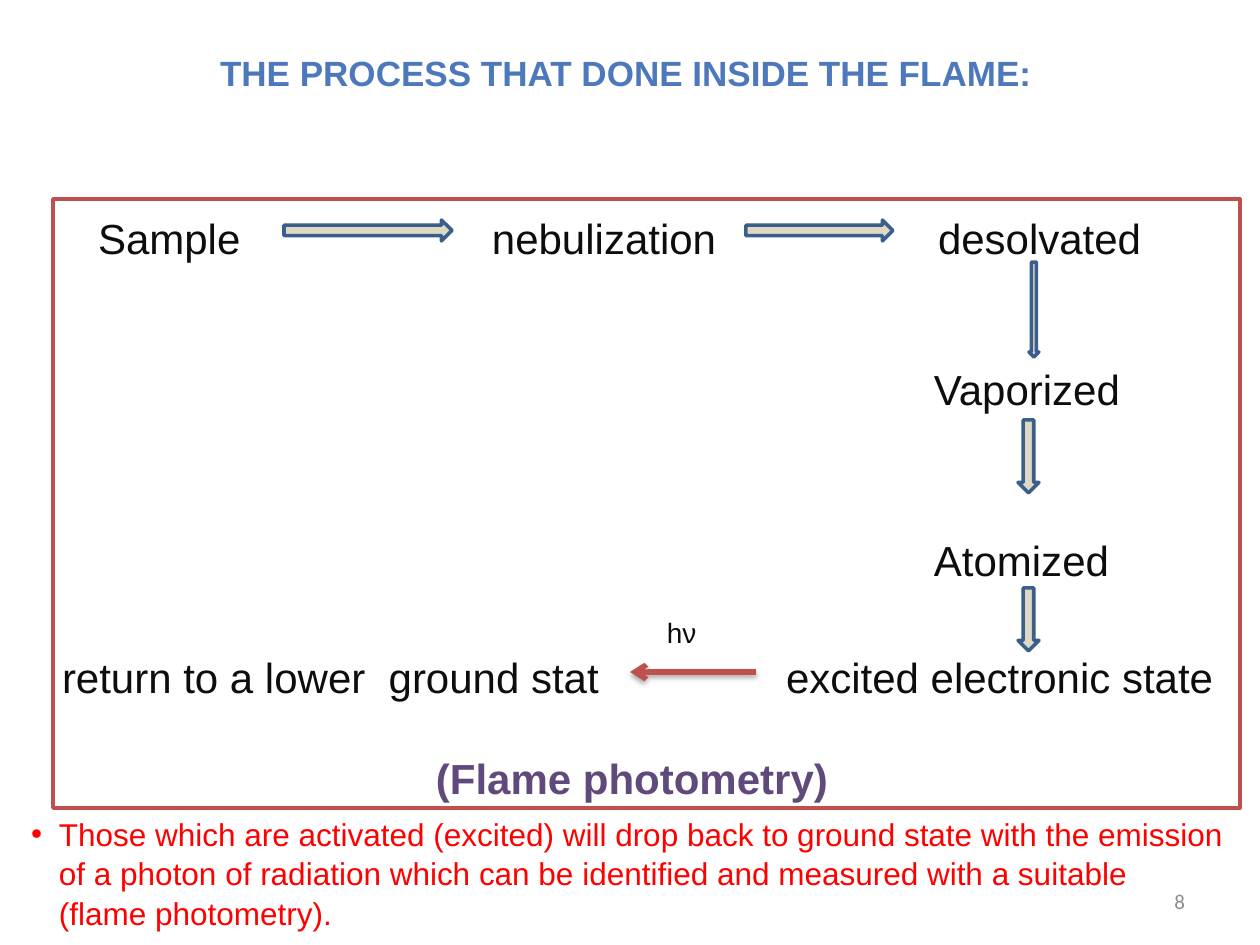
from dataclasses import dataclass

from lxml.etree import SubElement
from pptx import Presentation
from pptx.dml.color import RGBColor
from pptx.enum.shapes import MSO_CONNECTOR as Connector, MSO_SHAPE as Preset
from pptx.enum.text import MSO_ANCHOR as Anchor, PP_ALIGN as Align
from pptx.oxml.ns import qn
from pptx.util import Emu, Pt

EMU_PER_PX = 914400 / 126


@dataclass(frozen=True)
class Theme:
    font: str = "Arial"
    number_font: str = "Calibri"
    white: str = "FFFFFF"
    title: str = "4D79BC"
    ink: str = "0D0D0D"
    accent: str = "C0504D"
    method: str = "604A7B"
    note: str = "FF0000"
    number: str = "8C8C8C"
    arrow_fill: str = "DDD9C3"
    arrow_line: str = "3A5F8C"
    shadow: str = "000000"
    label_size: int = 24
    title_size: int = 20
    note_size: int = 18
    small_size: int = 16
    number_size: int = 12


class FlameSlide:
    """Draws the flame process elements on one slide, measured in px."""

    def __init__(self, presentation, theme):
        self.theme = theme
        self.slide = presentation.slides.add_slide(presentation.slide_layouts[5])

    def px(self, *lengths):
        return [Emu(round(length * EMU_PER_PX)) for length in lengths]

    def prepare(self, shape, anchor=Anchor.TOP):
        frame = shape.text_frame
        frame.word_wrap = True
        frame.vertical_anchor = anchor
        frame.margin_left = frame.margin_right = frame.margin_top = frame.margin_bottom = 0
        return frame.paragraphs[0]

    def add_run(self, paragraph, text, size, color, bold=False, font=None):
        run = paragraph.add_run()
        run.text = text
        run.font.name = font or self.theme.font
        run.font.size = Pt(size)
        run.font.bold = bold
        run.font.color.rgb = RGBColor.from_string(color)

    def title(self, box, text):
        shape = self.slide.shapes.title
        shape.left, shape.top, shape.width, shape.height = self.px(*box)
        paragraph = self.prepare(shape)
        paragraph.alignment = Align.LEFT
        self.add_run(paragraph, text, self.theme.title_size, self.theme.title, True)

    def label(self, box, text, size=None, color=None, bold=False, font=None, align=Align.LEFT):
        paragraph = self.prepare(self.slide.shapes.add_textbox(*self.px(*box)))
        paragraph.alignment = align
        self.add_run(paragraph, text, size or self.theme.label_size,
                     color or self.theme.ink, bold, font)

    def bullet(self, box, indent, lines):
        shape = self.slide.shapes.add_textbox(*self.px(*box))
        paragraph = self.prepare(shape, Anchor.MIDDLE)
        properties = paragraph._p.get_or_add_pPr()
        margin = self.px(indent)[0]
        properties.set("marL", str(margin))
        properties.set("indent", str(-margin))
        SubElement(properties, qn("a:buFont"), typeface=self.theme.font)
        SubElement(properties, qn("a:buChar"), char="•")
        paragraph.line_spacing = 1.05
        for index, line in enumerate(lines):
            if index:
                paragraph.add_line_break()
            self.add_run(paragraph, line, self.theme.note_size, self.theme.note)

    def shape(self, preset, box, fill, line):
        shape = self.slide.shapes.add_shape(preset, *self.px(*box))
        shape.shadow.inherit = False
        shape.fill.solid()
        shape.fill.fore_color.rgb = RGBColor.from_string(fill)
        shape.line.color.rgb = RGBColor.from_string(line)
        shape.line.width = Pt(2)

    def emission_arrow(self, start, end):
        arrow = self.slide.shapes.add_connector(Connector.STRAIGHT, *self.px(*start, *end))
        arrow.line.color.rgb = RGBColor.from_string(self.theme.accent)
        arrow.line.width = Pt(3)
        SubElement(arrow.line._get_or_add_ln(), qn("a:tailEnd"), type="arrow")
        effects = SubElement(arrow._element.spPr, qn("a:effectLst"))
        shadow = SubElement(effects, qn("a:outerShdw"), blurRad=str(Pt(3.1)),
                            dist=str(Pt(1.8)), dir="5400000", rotWithShape="0")
        color = SubElement(shadow, qn("a:srgbClr"), val=self.theme.shadow)
        SubElement(color, qn("a:alpha"), val="35000")


def main():
    theme = Theme()
    presentation = Presentation()
    page = FlameSlide(presentation, theme)
    presentation.slide_width, presentation.slide_height = page.px(1260, 945)

    page.title((220, 51, 850, 40), "THE PROCESS THAT DONE INSIDE THE FLAME:")
    page.shape(Preset.RECTANGLE, (53, 199, 1187, 609), theme.white, theme.accent)

    for left, top, width, text in (
        (98, 213, 160, "Sample"),
        (492, 213, 240, "nebulization"),
        (938, 213, 220, "desolvated"),
        (934, 364, 200, "Vaporized"),
        (934, 535, 200, "Atomized"),
        (786, 652, 448, "excited electronic state"),
        (62, 652, 560, "return to a lower  ground stat"),
    ):
        page.label((left, top, width, 48), text)
    page.label((667, 616, 50, 32), "hν", theme.small_size)
    page.label((436, 753, 420, 48), "(Flame photometry)", color=theme.method, bold=True)

    for preset, box in (
        (Preset.RIGHT_ARROW, (284, 220, 168, 21)),
        (Preset.RIGHT_ARROW, (746, 220, 147, 21)),
        (Preset.DOWN_ARROW, (1029, 262, 10, 95)),
        (Preset.DOWN_ARROW, (1018, 420, 21, 73)),
        (Preset.DOWN_ARROW, (1018, 588, 21, 63)),
    ):
        page.shape(preset, box, theme.arrow_fill, theme.arrow_line)
    page.emission_arrow((756, 672), (630, 672))

    page.bullet((31, 809, 1219, 127), 28, (
        "Those which are activated (excited) will drop back to ground state with the emission",
        "of a photon of radiation which can be identified and measured with a suitable",
        "(flame photometry).",
    ))
    page.label((1085, 889, 100, 26), "8", theme.number_size, theme.number,
               font=theme.number_font, align=Align.RIGHT)
    presentation.save("out.pptx")


if __name__ == "__main__":
    main()
